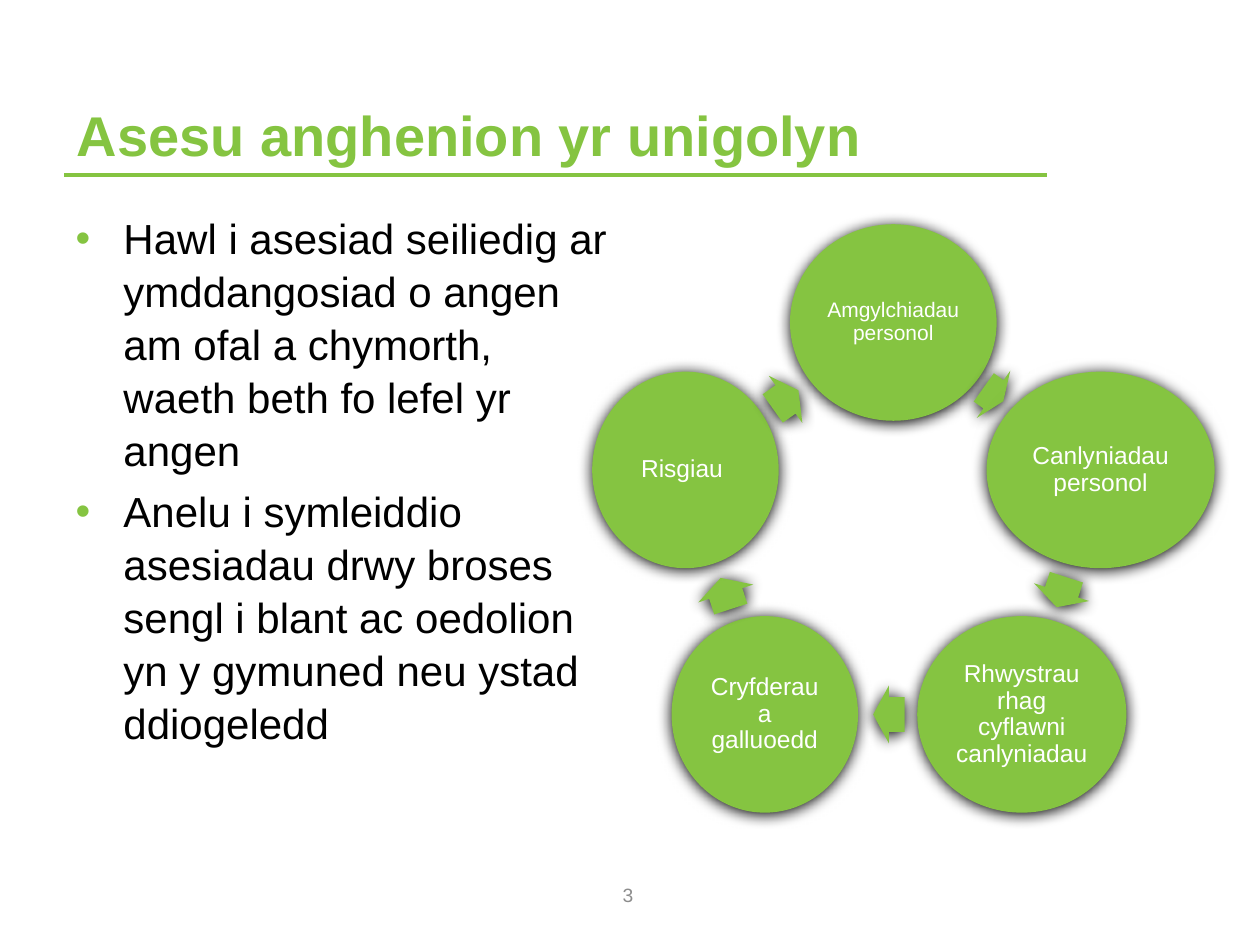
from dataclasses import dataclass
from math import atan2, degrees

from lxml import etree
from pptx import Presentation
from pptx import util as u
from pptx.dml.color import RGBColor
from pptx.enum import shapes, text
from pptx.oxml import ns


@dataclass(frozen=True)
class Theme:
    """Colours, font and type sizes of the deck."""
    green: str = "85C441"
    black: str = "000000"
    white: str = "FFFFFF"
    grey: str = "8C8C8C"
    font: str = "Arial"
    title: int = 32
    body: int = 24
    node: int = 14
    small: int = 12
    foot: int = 11


T = Theme()
COLS, ROWS = 100, 75
WIDE, HIGH = u.Inches(10), u.Inches(7.5)

POINTS = [
    "Hawl i asesiad seiliedig ar ymddangosiad o angen am ofal a chymorth, "
    "waeth beth fo lefel yr angen",
    "Anelu i symleiddio asesiadau drwy broses sengl i blant ac oedolion "
    "yn y gymuned neu ystad ddiogeledd",
]
NODES = [
    ("Amgylchiadau personol", 70.9, 25.6, 16.4, T.small),
    ("Canlyniadau personol", 87.35, 37.3, 18.1, T.node),
    ("Rhwystrau rhag cyflawni canlyniadau", 81.1, 56.7, 16.6, T.node),
    ("Cryfderau a galluoedd", 60.7, 56.7, 14.8, T.node),
    ("Risgiau ", 54.4, 37.3, 14.8, T.node),
]
ARROWS = [(78.85, 31.3, 1.9), (84.25, 47, 2.5), (70.55, 56.7, 2.5),
          (57.6, 47.1, 2.6), (62.35, 31.7, 2.5)]


def grid(col, row):
    """Turn a column and a row into slide lengths."""
    return round(WIDE * col / COLS), round(HIGH * row / ROWS)


def box(col, row, wide, high):
    """Give left, top, width and height of a block of cells."""
    return *grid(col, row), *grid(wide, high)


def mid(col, row, wide, high):
    """Give the block of cells centred on a grid point."""
    return box(col - wide / 2, row - high / 2, wide, high)


def place(shape, area):
    """Move a placeholder onto an area."""
    shape.left, shape.top, shape.width, shape.height = area


def ink(para, size, tint, bold=False):
    """Format every run of a paragraph."""
    for run in para.runs:
        font = run.font
        font.name, font.size, font.bold = T.font, u.Pt(size), bold
        font.color.rgb = RGBColor.from_string(tint)


def child(node, tag, **attrs):
    """Add a drawing element under a node."""
    return etree.SubElement(node, ns.qn(f"a:{tag}"), attrs)


def shade(shape):
    """Give a shape a soft black shadow just below it."""
    shape.shadow.inherit = False
    glow = child(shape._element.spPr.find(ns.qn("a:effectLst")), "outerShdw",
                 blurRad=str(u.Pt(8.5)), dist=str(u.Pt(1)),
                 dir="5400000", algn="ctr", rotWithShape="0")
    child(glow, "srgbClr", val=T.black)


def solid(slide, kind, area):
    """Draw a green shape with a shadow and no outline."""
    shape = slide.shapes.add_shape(kind, *area)
    shape.fill.solid()
    shape.fill.fore_color.rgb = RGBColor.from_string(T.green)
    shape.line.fill.background()
    shade(shape)
    return shape


def label(shape, words, size, tint):
    """Write centred words in the middle of a shape."""
    frame = shape.text_frame
    frame.text, frame.word_wrap = words, True
    frame.vertical_anchor = text.MSO_ANCHOR.MIDDLE
    para = frame.paragraphs[0]
    para.alignment = text.PP_ALIGN.CENTER
    ink(para, size, tint)
    return frame


def head(slide):
    """Set the title and the rule under it."""
    title = slide.shapes.title
    place(title, box(5.1, 2.9, 78, 10.9))
    frame = title.text_frame
    frame.text = "Asesu anghenion yr unigolyn"
    frame.vertical_anchor = text.MSO_ANCHOR.BOTTOM
    frame.auto_size = text.MSO_AUTO_SIZE.NONE
    frame.paragraphs[0].alignment = text.PP_ALIGN.LEFT
    ink(frame.paragraphs[0], T.title, T.green, True)
    rule = slide.shapes.add_connector(
        shapes.MSO_CONNECTOR.STRAIGHT, *grid(5.1, 13.9), *grid(83.1, 13.9))
    rule.line.width = u.Pt(2)
    rule.line.color.rgb = RGBColor.from_string(T.green)
    child(rule._element.spPr, "effectLst")


def bullets(slide):
    """Fill the body with green-bulleted points."""
    body = slide.placeholders[1]
    place(body, box(5, 16.2, 44.2, 49.5))
    frame = body.text_frame
    frame.text = "\n".join(POINTS)
    frame.auto_size = text.MSO_AUTO_SIZE.NONE
    for i, para in enumerate(frame.paragraphs):
        props = para._p.get_or_add_pPr()
        hang = u.Inches(0.38)
        props.set("marL", str(hang))
        props.set("indent", str(-hang))
        child(child(props, "buClr"), "srgbClr", val=T.green)
        child(props, "buFont", typeface=T.font)
        child(props, "buChar", char="•")
        para.line_spacing = 1.05
        para.space_before = u.Pt(0.2 * T.body if i else 0)
        ink(para, T.body, T.black)


def node(slide, words, col, row, wide, size):
    """Draw one labelled circle of the cycle."""
    shape = solid(slide, shapes.MSO_SHAPE.OVAL, mid(col, row, wide, 15.6))
    frame = label(shape, words, size, T.white)
    frame.margin_left = frame.margin_right = u.Inches(0.02)
    frame.margin_top = frame.margin_bottom = u.Inches(0.02)
    frame.paragraphs[0].line_spacing = 0.9


def arrow(slide, spot, start, end):
    """Draw an arrow that points from one circle to the next."""
    col, row, wide = spot
    shape = solid(slide, shapes.MSO_SHAPE.RIGHT_ARROW,
                  mid(col, row, wide, 4.6))
    shape.adjustments[0], shape.adjustments[1] = 0.6, 0.5
    shape.rotation = degrees(atan2(end[2] - start[2], end[1] - start[1])) % 360


def cycle(slide):
    """Draw the ring of circles and arrows."""
    for i, (item, spot) in enumerate(zip(NODES, ARROWS)):
        node(slide, *item)
        arrow(slide, spot, item, NODES[(i + 1) % len(NODES)])


def main():
    """Build and save the slide."""
    deck = Presentation()
    deck.slide_width, deck.slide_height = WIDE, HIGH
    slide = deck.slides.add_slide(deck.slide_layouts[1])
    head(slide)
    bullets(slide)
    cycle(slide)
    page = slide.shapes.add_textbox(*box(38.2, 69, 23.3, 4))
    label(page, "3", T.foot, T.grey)
    deck.save("out.pptx")


if __name__ == "__main__":
    main()
